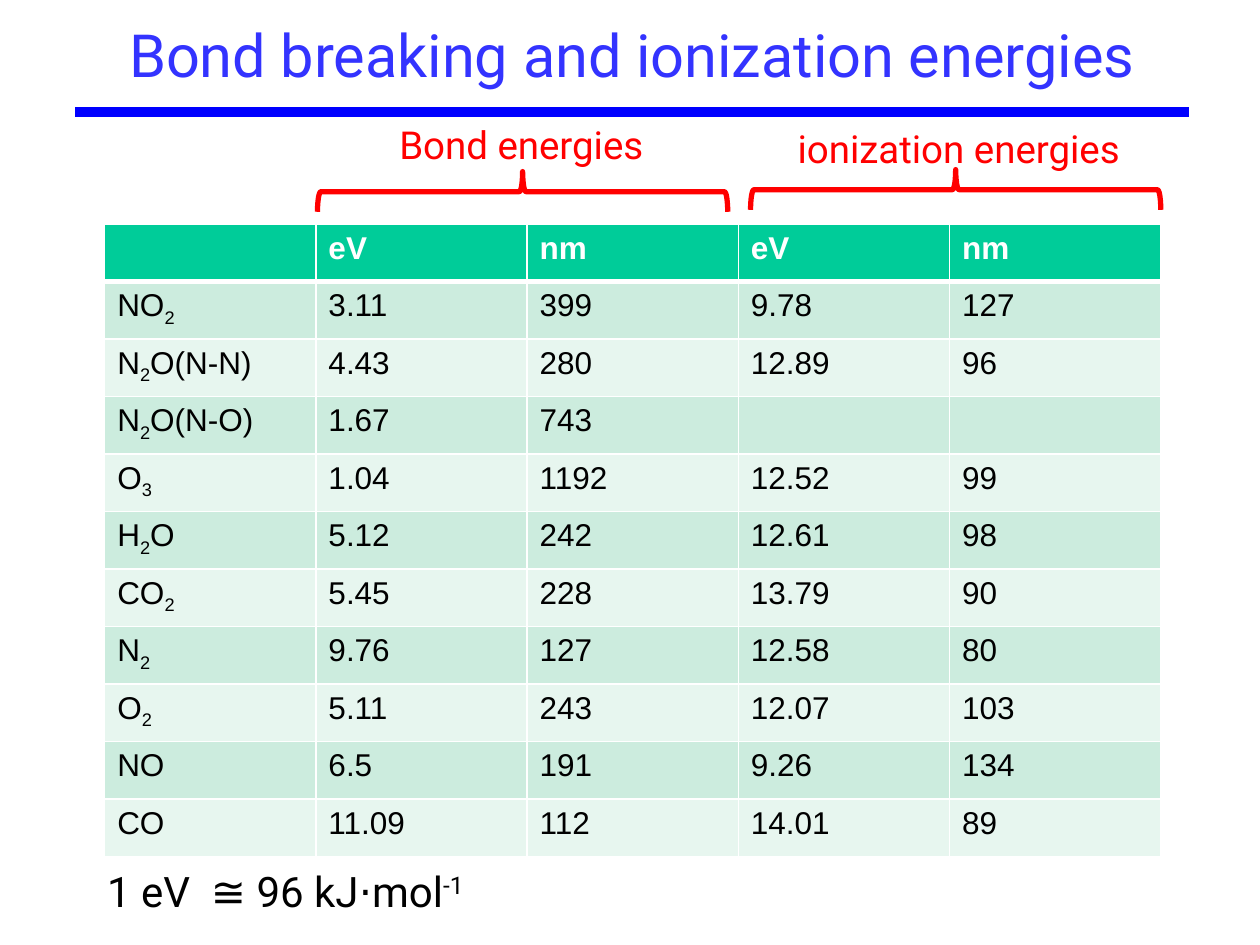
import itertools

import pptx
import pptx.dml.color
import pptx.enum.shapes
import pptx.enum.text
import pptx.oxml
import pptx.oxml.ns
import pptx.util
from pptx.util import Cm, Pt

COLORS = {
    "title": "3333FF", "rule": "0000FF", "accent": "FF0000", "text": "000000",
    "white": "FFFFFF", "header": "00CC99", "band_dark": "CCECDE", "band_light": "E7F6EF",
}
HEADER = ["", "eV", "nm", "eV", "nm"]
ENERGIES = [
    ["NO2", "3.11", "399", "9.78", "127"],
    ["N2O(N-N)", "4.43", "280", "12.89", "96"],
    ["N2O(N-O)", "1.67", "743", "", ""],
    ["O3", "1.04", "1192", "12.52", "99"],
    ["H2O", "5.12", "242", "12.61", "98"],
    ["CO2", "5.45", "228", "13.79", "90"],
    ["N2", "9.76", "127", "12.58", "80"],
    ["O2", "5.11", "243", "12.07", "103"],
    ["NO", "6.5", "191", "9.26", "134"],
    ["CO", "11.09", "112", "14.01", "89"],
]


def color(name):
    return pptx.dml.color.RGBColor.from_string(COLORS[name])


def add_span(para, text, size, font, color_name, bold=False, baseline=0):
    span = para.add_run()
    span.text = text
    span.font.size = Pt(size)
    span.font.name = font
    span.font.bold = bold
    span.font.color.rgb = color(color_name)
    if baseline:
        span._r.get_or_add_rPr().set("baseline", str(baseline * 1000))


def add_textbox(page, box):
    frame = page.shapes.add_textbox(*map(Cm, box)).text_frame
    frame.word_wrap = True
    return frame.paragraphs[0]


def add_title(page, box, rule_drop, rule_inset):
    left, top, width, height = box
    title = page.shapes.title
    title.left, title.top, title.width, title.height = map(Cm, box)
    title.text_frame.vertical_anchor = pptx.enum.text.MSO_ANCHOR.TOP
    title.text_frame.auto_size = pptx.enum.text.MSO_AUTO_SIZE.NONE
    para = title.text_frame.paragraphs[0]
    para.alignment = pptx.enum.text.PP_ALIGN.CENTER
    add_span(para, "Bond breaking and ionization energies", 34, "Roboto", "title")

    # Rule under the title
    rule_y = Cm(top + rule_drop)
    rule = page.shapes.add_connector(
        pptx.enum.shapes.MSO_CONNECTOR.STRAIGHT,
        Cm(left + rule_inset), rule_y, Cm(left + width - rule_inset), rule_y)
    rule.line.color.rgb = color("rule")
    rule.line.width = Pt(6)
    rule._element.spPr.append(pptx.oxml.parse_xml(
        f'<a:effectLst {pptx.oxml.ns.nsdecls("a")}/>'))


def add_bracket_heading(page, box, text, indent, brace_height):
    """Heading with a brace along the bottom edge of the box."""
    left, top, width, height = box
    para = add_textbox(page, (left + indent, top, width, 2.13))
    add_span(para, text, 22, "Roboto", "accent")

    # The brace is drawn upright, then turned about its centre
    center_x = left + width / 2
    center_y = top + height - brace_height / 2
    brace = page.shapes.add_shape(
        pptx.enum.shapes.MSO_SHAPE.LEFT_BRACE,
        Cm(center_x - brace_height / 2), Cm(center_y - width / 2),
        Cm(brace_height), Cm(width))
    brace.rotation = 90
    brace.shadow.inherit = False
    brace.fill.background()
    brace.line.color.rgb = color("accent")
    brace.line.width = Pt(3)


def set_borders(cell, widths):
    properties = cell._tc.get_or_add_tcPr()
    for side in "LRTB":
        properties.append(pptx.oxml.parse_xml(
            f'<a:ln{side} {pptx.oxml.ns.nsdecls("a")} w="{Pt(widths.get(side, 1))}">'
            f'<a:solidFill><a:srgbClr val="{COLORS["white"]}"/></a:solidFill></a:ln{side}>'))


def fill_cell(cell, text, is_header, is_formula):
    para = cell.text_frame.paragraphs[0]
    para.font.size = Pt(18)
    ink = "white" if is_header else "text"
    # Digits in a chemical formula are subscripts
    parts = [(False, text)] if text else []
    if is_formula:
        parts = [(digit, "".join(chars))
                 for digit, chars in itertools.groupby(text, str.isdigit)]
    for subscript, part in parts:
        add_span(para, part, 18, "Arial", ink, is_header, -25 if subscript else 0)


def add_energy_table(page, box):
    rows = [HEADER] + ENERGIES
    table = page.shapes.add_table(len(rows), len(HEADER), *map(Cm, box)).table
    table.horz_banding = False
    for column in table.columns:
        column.width = Cm(box[2] / len(HEADER))
    for row_index, row in enumerate(rows):
        table.rows[row_index].height = Cm(box[3] / len(rows))
        band = "band_dark" if row_index % 2 else "band_light"
        for column_index, text in enumerate(row):
            cell = table.cell(row_index, column_index)
            set_borders(cell, {0: {"B": 3}, 1: {"T": 3}}.get(row_index, {}))
            cell.fill.solid()
            cell.fill.fore_color.rgb = color("header" if row_index == 0 else band)
            fill_cell(cell, text, row_index == 0, row_index > 0 and column_index == 0)


def add_conversion_note(page, box):
    para = add_textbox(page, box)
    para.alignment = pptx.enum.text.PP_ALIGN.JUSTIFY
    add_span(para, "1 eV  ≅ 96 kJ⋅mol", 24, "Roboto", "text")
    add_span(para, "-1", 24, "Roboto", "text", baseline=30)


def main():
    deck = pptx.Presentation()
    deck.slide_width, deck.slide_height = Cm(25.4), Cm(19.05)
    page = deck.slides.add_slide(deck.slide_layouts[5])

    add_title(page, (1.02, 0.23, 23.44, 3.68), rule_drop=2.03, rule_inset=0.5)
    add_bracket_heading(page, (6.4, 2.31, 8.27, 1.96), "Bond energies", 1.4, 0.81)
    add_bracket_heading(page, (15.13, 2.39, 8.27, 1.84), "ionization energies", 0.7, 0.81)
    add_energy_table(page, (2.11, 4.52, 21.29, 12.75))
    add_conversion_note(page, (1.91, 17.32, 8.2, 1.3))

    deck.save("out.pptx")


if __name__ == "__main__":
    main()
